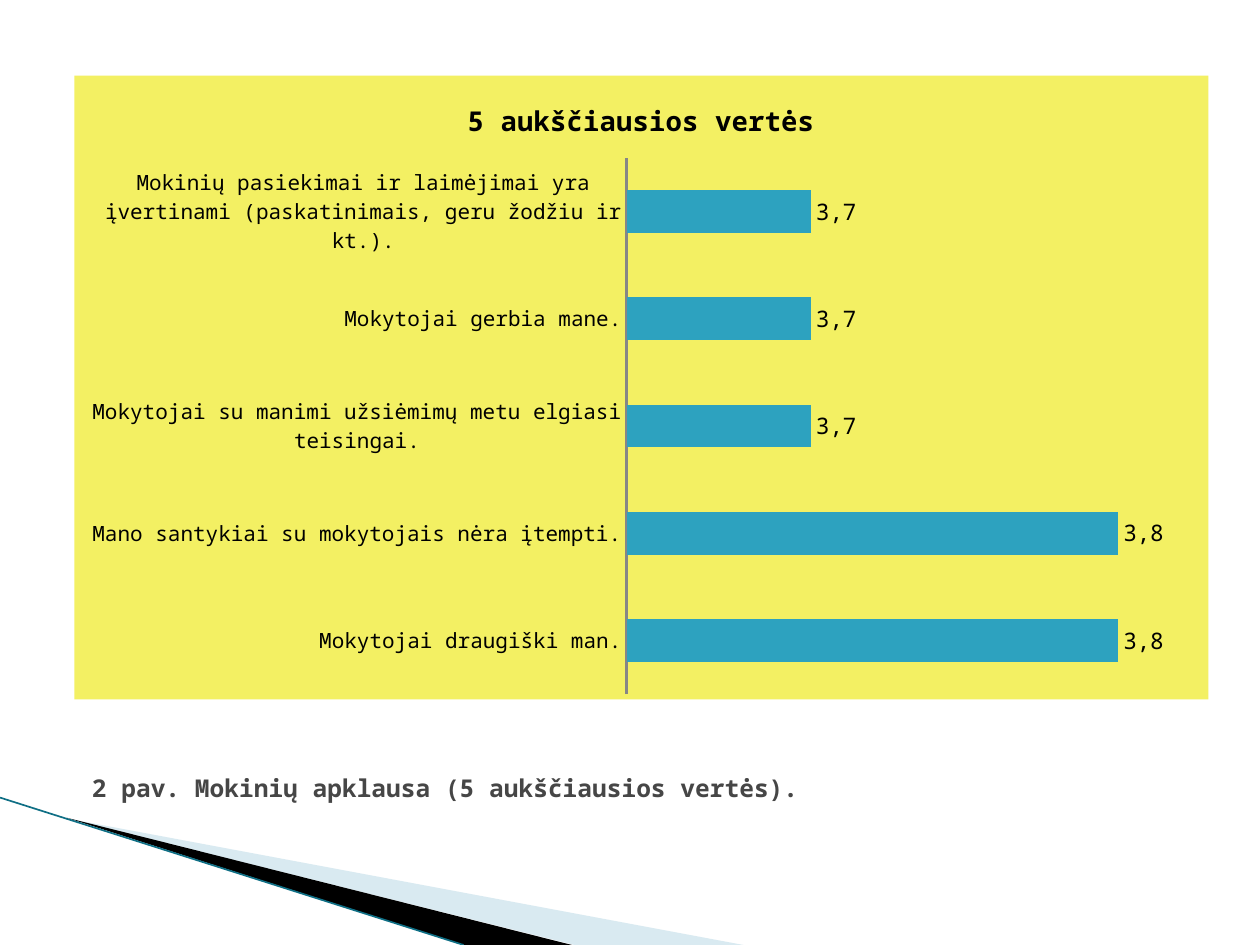
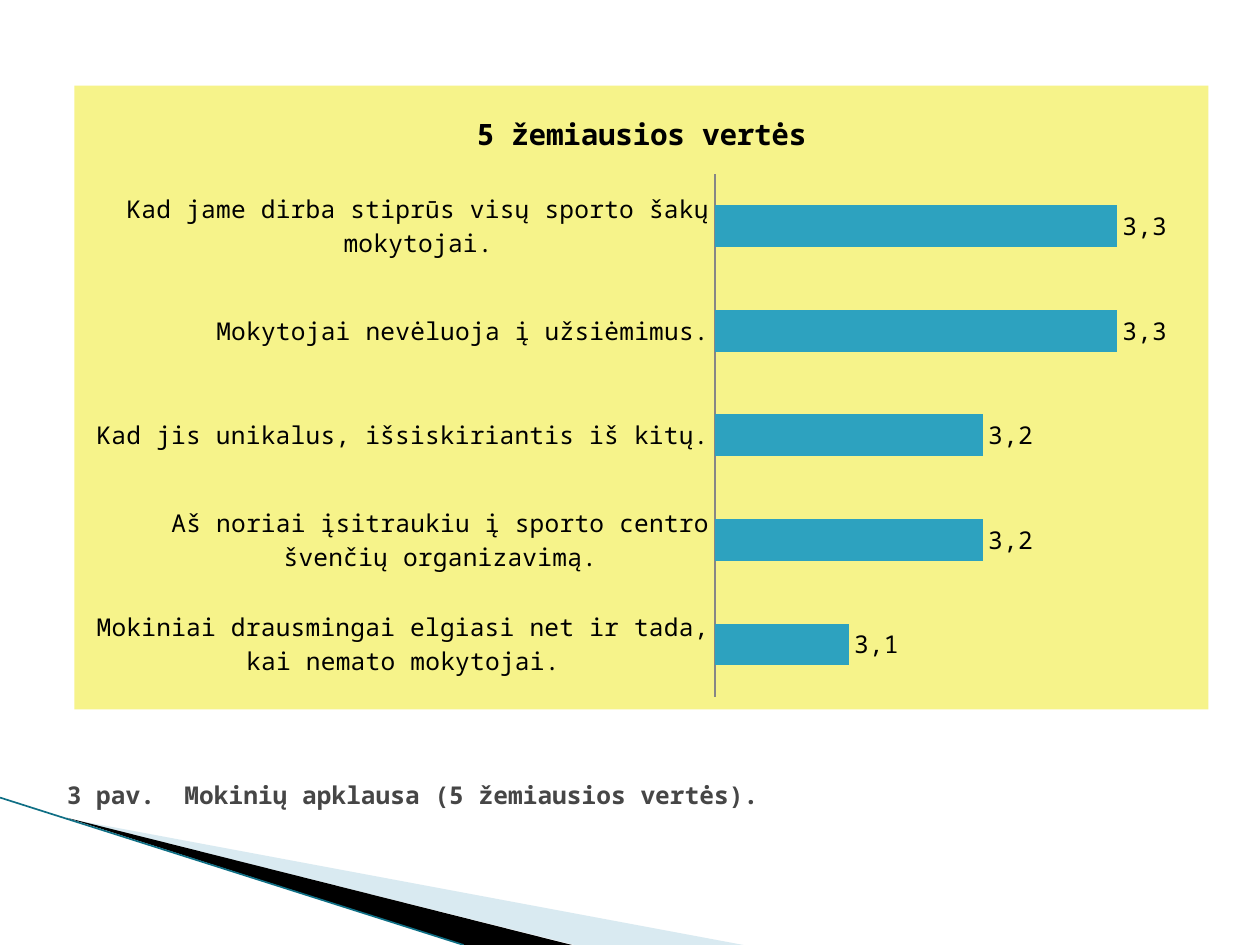
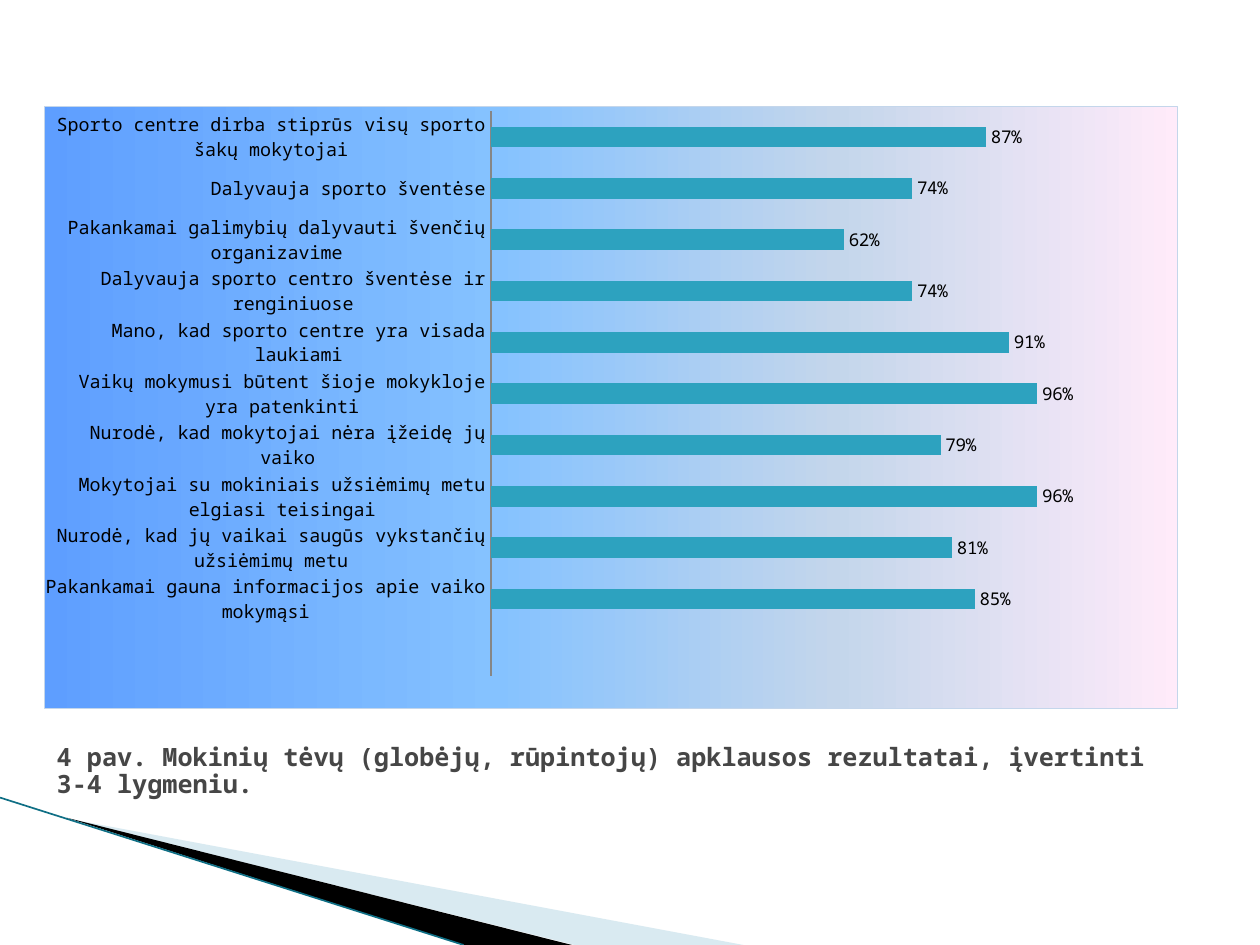
"""Three slides of survey bar charts over a shared corner decoration."""
from dataclasses import dataclass

from pptx import Presentation
from pptx.chart.data import CategoryChartData
from pptx.dml.color import RGBColor
from pptx.enum.chart import XL_CHART_TYPE, XL_LABEL_POSITION, XL_TICK_MARK
from pptx.enum.shapes import MSO_CONNECTOR
from pptx.enum.text import MSO_ANCHOR, MSO_AUTO_SIZE, PP_ALIGN
from pptx.oxml import parse_xml
from pptx.oxml.ns import nsdecls, qn
from pptx.oxml.xmlchemy import OxmlElement
from pptx.util import Inches, Pt

BAR = XL_CHART_TYPE.BAR_CLUSTERED
OUTSIDE = XL_LABEL_POSITION.OUTSIDE_END
NO_TICK = XL_TICK_MARK.NONE
STRAIGHT = MSO_CONNECTOR.STRAIGHT
MIDDLE = MSO_ANCHOR.MIDDLE
NO_FIT = MSO_AUTO_SIZE.NONE
LEFT = PP_ALIGN.LEFT

FONT = "Noto Sans Mono"
COLORS = {
    "text": "000000",
    "caption": "464646",
    "bar": "2DA2BF",
    "axis": "868686",
    "pale": "A0CBDC",
    "wedge": "000000",
    "edge": "0F6F85",
    "border": "C4D6EB",
}
YELLOW = ((0, "F3F063"),)
LIGHT_YELLOW = ((0, "F6F38A"),)
BLUE_TO_PINK = ((0, "5E9EFF"), (40, "85C2FF"), (70, "C4D6EB"), (100, "FFEBFA"))


@dataclass
class Caption:
    """Title text under a chart, with its box in inches."""
    text: str
    box: tuple[float, float, float, float]
    size: float = 14
    left: float = 0.1
    bottom: float = 0.05
    spacing: float = 1.0


@dataclass
class Survey:
    """One bar chart with its rows from bottom to top."""
    caption: Caption
    box: tuple[float, float, float, float]
    plot: tuple[float, float, float, float]
    rows: list[tuple[str, float | None]]
    scale: tuple[float, float]
    fill: tuple[tuple[int, str], ...]
    label_size: float
    category_size: float
    title: str = ""
    title_size: float = 16
    axis_width: float = 0.75
    overlap: int = 0
    number_format: str = "0.00%"
    border: str = ""


SURVEYS = [
    Survey(
        Caption("2 pav. Mokinių apklausa (5 aukščiausios vertės).",
                (0.28, 5.95, 9, 1.25), left=0.45, bottom=0.7),
        box=(0.59, 0.6, 9, 4.95), plot=(0.487, 0.132, 0.488, 0.86),
        rows=[
            ("Mokytojai draugiški man.", 0.038),
            ("Mano santykiai su mokytojais nėra įtempti.", 0.038),
            ("Mokytojai su manimi užsiėmimų metu elgiasi teisingai.", 0.037),
            ("Mokytojai gerbia mane.", 0.037),
            ("Mokinių pasiekimai ir laimėjimai yra įvertinami "
             "(paskatinimais, geru žodžiu ir kt.).", 0.037),
        ],
        scale=(0.0364, 0.0382), fill=YELLOW, label_size=13, category_size=12,
        title="5 aukščiausios vertės", title_size=15.6, axis_width=1.25, overlap=-25),
    Survey(
        Caption("3 pav.  Mokinių apklausa (5 žemiausios vertės).",
                (0.43, 5.72, 9.06, 1.17)),
        box=(0.59, 0.68, 9, 4.95), plot=(0.565, 0.142, 0.414, 0.838),
        rows=[
            ("Mokiniai drausmingai elgiasi net ir tada, kai nemato mokytojai.", 0.031),
            ("Aš noriai įsitraukiu į sporto centro švenčių organizavimą.", 0.032),
            ("Kad jis unikalus, išsiskiriantis iš kitų.", 0.032),
            ("Mokytojai nevėluoja į užsiėmimus.", 0.033),
            ("Kad jame dirba stiprūs visų sporto šakų mokytojai.", 0.033),
        ],
        scale=(0.03, 0.0335), fill=LIGHT_YELLOW, label_size=14, category_size=14,
        title="5 žemiausios vertės", title_size=16.8, overlap=-25),
    Survey(
        Caption("4 pav. Mokinių tėvų (globėjų, rūpintojų) apklausos rezultatai, "
                "įvertinti 3-4 lygmeniu.",
                (0.35, 5.8, 9.16, 1.25), size=14.4, bottom=0.65, spacing=0.9),
        box=(0.35, 0.84, 9, 4.79), plot=(0.394, 0.008, 0.603, 0.938),
        rows=[
            ("", None),
            ("Pakankamai gauna informacijos apie vaiko mokymąsi", 0.85),
            ("Nurodė, kad jų vaikai saugūs vykstančių užsiėmimų metu", 0.81),
            ("Mokytojai su mokiniais užsiėmimų metu elgiasi teisingai", 0.96),
            ("Nurodė, kad mokytojai nėra įžeidę jų vaiko", 0.79),
            ("Vaikų mokymusi būtent šioje mokykloje yra patenkinti", 0.96),
            ("Mano, kad sporto centre yra visada laukiami", 0.91),
            ("Dalyvauja sporto centro šventėse ir renginiuose", 0.74),
            ("Pakankamai galimybių dalyvauti švenčių organizavime", 0.62),
            ("Dalyvauja sporto šventėse", 0.74),
            ("Sporto centre dirba stiprūs visų sporto šakų mokytojai", 0.87),
        ],
        scale=(0, 1.2), fill=BLUE_TO_PINK, label_size=10, category_size=10.5,
        number_format="0%", border=COLORS["border"]),
]


def rgb(name: str) -> RGBColor:
    """Return a named colour."""
    return RGBColor.from_string(COLORS[name])


def style_font(font, size: float, color: str = "text", bold: bool = False) -> None:
    """Set the shared typeface with a size, colour and weight."""
    font.name, font.size, font.bold = FONT, Pt(size), bold
    font.color.rgb = rgb(color)


def write(tf, text: str, *, size: float, color: str = "text", bold: bool = False):
    """Put one formatted run in a text frame and return its paragraph."""
    p = tf.paragraphs[0]
    r = p.add_run()
    r.text = text
    style_font(r.font, size, color, bold)
    return p


def add_wedge(s, points: list[tuple[float, float]], color: str, alpha: int = 100) -> None:
    """Draw a filled outline through points given in inches."""
    start, *rest = [(Inches(x), Inches(y)) for x, y in points]
    builder = s.shapes.build_freeform(*start)
    builder.add_line_segments(rest, close=True)
    sp = builder.convert_to_shape()
    sp.shadow.inherit = False
    sp.line.fill.background()
    sp.fill.solid()
    sp.fill.fore_color.rgb = rgb(color)
    if alpha < 100:
        node = OxmlElement("a:alpha")
        node.set("val", str(alpha * 1000))
        next(sp.element.spPr.iter(qn("a:srgbClr"))).append(node)


def add_corner(s) -> None:
    """Draw the wedges and edge line in the lower left corner."""
    add_wedge(s, [(0.55, 6.5), (5.9, 7.5), (4.56, 7.5)], "pale", 40)
    add_wedge(s, [(0.53, 6.49), (4.54, 7.5), (3.68, 7.5)], "wedge")
    line = s.shapes.add_connector(STRAIGHT, 0, Inches(6.33), Inches(3.68), Inches(7.5))
    line.line.color.rgb = rgb("edge")
    line.line.width = Pt(0.95)
    line.element.spPr.append(OxmlElement("a:effectLst"))


def fill_chart(chart, stops: tuple[tuple[int, str], ...], border: str) -> None:
    """Give the chart area a solid or gradient fill and an optional border."""
    if len(stops) == 1:
        fill = f'<a:solidFill><a:srgbClr val="{stops[0][1]}"/></a:solidFill>'
    else:
        marks = "".join(f'<a:gs pos="{pos * 1000}"><a:srgbClr val="{color}"/></a:gs>'
                        for pos, color in stops)
        fill = f'<a:gradFill><a:gsLst>{marks}</a:gsLst><a:lin ang="0" scaled="0"/></a:gradFill>'
    edge = f'<a:solidFill><a:srgbClr val="{border}"/></a:solidFill>' if border else "<a:noFill/>"
    chart.element.find(qn("c:chart")).addnext(parse_xml(
        f'<c:spPr {nsdecls("c", "a")}>{fill}<a:ln w="9525">{edge}</a:ln></c:spPr>'))


def place_plot(chart, plot: tuple[float, float, float, float]) -> None:
    """Fix the inner plot area as fractions of the chart."""
    area = next(chart.element.iter(qn("c:plotArea")))
    for old in area.findall(qn("c:layout")):
        area.remove(old)
    sizes = "".join(f'<c:{key} val="{value}"/>' for key, value in zip("xywh", plot))
    area.insert(0, parse_xml(
        f'<c:layout {nsdecls("c")}><c:manualLayout><c:layoutTarget val="inner"/>'
        f'<c:xMode val="edge"/><c:yMode val="edge"/>{sizes}</c:manualLayout></c:layout>'))


def add_survey_chart(s, survey: Survey) -> None:
    """Add the bar chart of one survey."""
    data = CategoryChartData(number_format=survey.number_format)
    data.categories = [name for name, _ in survey.rows]
    data.add_series("Series 1", [value for _, value in survey.rows])
    chart = s.shapes.add_chart(BAR, *map(Inches, survey.box), data).chart
    style_font(chart.font, survey.label_size)
    chart.has_legend = False
    chart.has_title = bool(survey.title)
    if survey.title:
        write(chart.chart_title.text_frame, survey.title, size=survey.title_size, bold=True)
        chart.chart_title.include_in_layout = False

    values = chart.value_axis
    values.minimum_scale, values.maximum_scale = survey.scale
    values.has_major_gridlines = False
    values.visible = False
    names = chart.category_axis
    names.major_tick_mark = names.minor_tick_mark = NO_TICK
    names.format.line.color.rgb = rgb("axis")
    names.format.line.width = Pt(survey.axis_width)
    style_font(names.tick_labels.font, survey.category_size)

    plot = chart.plots[0]
    plot.gap_width, plot.overlap = 150, survey.overlap
    plot.vary_by_categories = False
    bars = plot.series[0]
    bars.format.fill.solid()
    bars.format.fill.fore_color.rgb = rgb("bar")
    labels = bars.data_labels
    labels.show_value = True
    labels.number_format = survey.number_format
    labels.number_format_is_linked = False
    labels.position = OUTSIDE
    style_font(labels.font, survey.label_size)
    if survey.number_format == "0.00%":
        for i, (_, value) in enumerate(survey.rows):
            label = bars.points[i].data_label
            score = f"{value * 100:.1f}".replace(".", ",")
            write(label.text_frame, score, size=survey.label_size)
            label.position = OUTSIDE
    place_plot(chart, survey.plot)
    fill_chart(chart, survey.fill, survey.border)


def set_caption(s, caption: Caption) -> None:
    """Move the title placeholder under the chart and fill it."""
    title = s.shapes.title
    title.left, title.top, title.width, title.height = map(Inches, caption.box)
    tf = title.text_frame
    tf.word_wrap, tf.auto_size, tf.vertical_anchor = True, NO_FIT, MIDDLE
    tf.margin_left, tf.margin_bottom = Inches(caption.left), Inches(caption.bottom)
    p = write(tf, caption.text, size=caption.size, color="caption", bold=True)
    p.alignment, p.line_spacing = LEFT, caption.spacing


def main() -> None:
    """Build the deck."""
    prs = Presentation()
    prs.slide_width, prs.slide_height = Inches(10), Inches(7.5)
    for survey in SURVEYS:
        s = prs.slides.add_slide(prs.slide_layouts[5])
        add_corner(s)
        add_survey_chart(s, survey)
        set_caption(s, survey.caption)
    prs.save("out.pptx")


if __name__ == "__main__":
    main()
